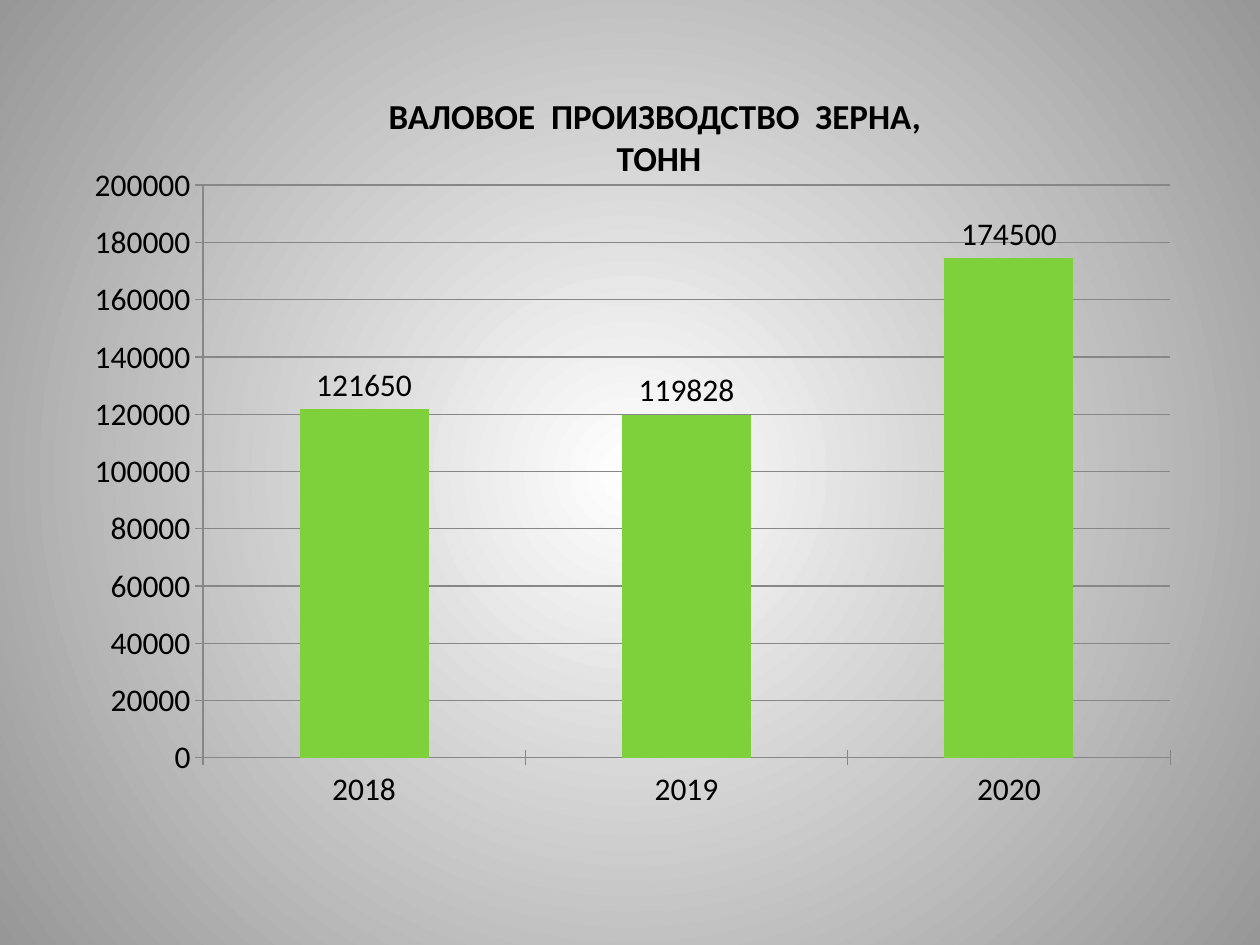
from pptx import Presentation
from pptx.chart.data import CategoryChartData
from pptx.dml.color import RGBColor
from pptx.enum.chart import XL_CHART_TYPE, XL_LABEL_POSITION, XL_TICK_MARK
from pptx.enum.text import MSO_ANCHOR, MSO_AUTO_SIZE, PP_ALIGN
from pptx.oxml import parse_xml
from pptx.oxml.ns import nsdecls, qn
from pptx.util import Inches, Pt

COLORS = {
    "text": "000000",
    "bar": "7FD13B",
    "line": "878787",
    "center": "FFFFFF",
    "edge": "979797",
}


def rgb(name):
    return RGBColor.from_string(COLORS[name])


class SlideBuilder:
    font_name = "Calibri"

    def __init__(self, deck):
        self.width, self.height = deck.slide_width, deck.slide_height
        self.page = deck.slides.add_slide(deck.slide_layouts[5])

    def frame(self, left, top, width, height):
        return (int(left * self.width), int(top * self.height),
                int(width * self.width), int(height * self.height))

    def style(self, font, size, bold=False):
        font.name = self.font_name
        font.size = Pt(size)
        font.bold = bold
        font.color.rgb = rgb("text")

    def background(self):
        fill = self.page.background.fill
        fill.gradient()
        for stop, name in zip(fill.gradient_stops, ("center", "edge")):
            stop.color.rgb = rgb(name)
        linear = next(self.page.element.iter(qn("a:lin")))
        radial = parse_xml(
            f'<a:path {nsdecls("a")} path="circle">'
            '<a:fillToRect l="50000" t="50000" r="50000" b="50000"/></a:path>')
        linear.getparent().replace(linear, radial)

    def title(self, text, share, size):
        box = self.page.shapes.title
        box.left, box.top, box.width, box.height = self.frame(*share)
        frame = box.text_frame
        frame.text = text
        frame.word_wrap = True
        frame.auto_size = MSO_AUTO_SIZE.SHAPE_TO_FIT_TEXT
        frame.vertical_anchor = MSO_ANCHOR.TOP
        for para in frame.paragraphs:
            para.alignment = PP_ALIGN.CENTER
            para.space_before = Pt(0)
            for span in para.runs:
                self.style(span.font, size, bold=True)

    def column_chart(self, values, share, plot_share, size):
        data = CategoryChartData()
        data.categories = list(values)
        data.add_series("Series 1", list(values.values()))
        chart = self.page.shapes.add_chart(
            XL_CHART_TYPE.COLUMN_CLUSTERED, *self.frame(*share), data).chart
        chart.has_title = False
        chart.has_legend = False
        self.style(chart.font, size)

        plot = chart.plots[0]
        plot.gap_width = 150
        plot.vary_by_categories = False
        bars = plot.series[0]
        bars.format.fill.solid()
        bars.format.fill.fore_color.rgb = rgb("bar")
        labels = bars.data_labels
        labels.show_value = True
        labels.position = XL_LABEL_POSITION.OUTSIDE_END
        self.style(labels.font, size)

        scale = chart.value_axis
        scale.minimum_scale, scale.maximum_scale = 0, 200000
        scale.major_unit = 20000
        scale.has_major_gridlines = True
        for axis in (chart.category_axis, scale):
            axis.major_tick_mark = XL_TICK_MARK.CROSS
            self.rule(axis.format.line)
        self.rule(scale.major_gridlines.format.line)
        self.place_plot(chart, plot_share)

    def rule(self, line):
        line.width = Pt(0.75)
        line.color.rgb = rgb("line")

    def place_plot(self, chart, share):
        area = next(chart.element.iter(qn("c:plotArea")))
        for layout in area.findall(qn("c:layout")):
            area.remove(layout)
        settings = [("layoutTarget", "inner"), ("xMode", "edge"), ("yMode", "edge")]
        settings += zip("xywh", share)
        items = "".join(f'<c:{tag} val="{value}"/>' for tag, value in settings)
        area.insert(0, parse_xml(
            f'<c:layout {nsdecls("c")}><c:manualLayout>{items}</c:manualLayout></c:layout>'))


def main():
    deck = Presentation()
    deck.slide_width, deck.slide_height = Inches(10), Inches(7.5)
    slide = SlideBuilder(deck)
    slide.background()
    slide.title("ВАЛОВОЕ  ПРОИЗВОДСТВО  ЗЕРНА, \nТОНН",
                (0.156, 0.093, 0.734, 0.103), 20)
    slide.column_chart({"2018": 121650, "2019": 119828, "2020": 174500},
                       (0.047, 0.145, 0.898, 0.75),
                       (0.127, 0.068, 0.855, 0.808), 18)
    deck.save("out.pptx")


if __name__ == "__main__":
    main()
